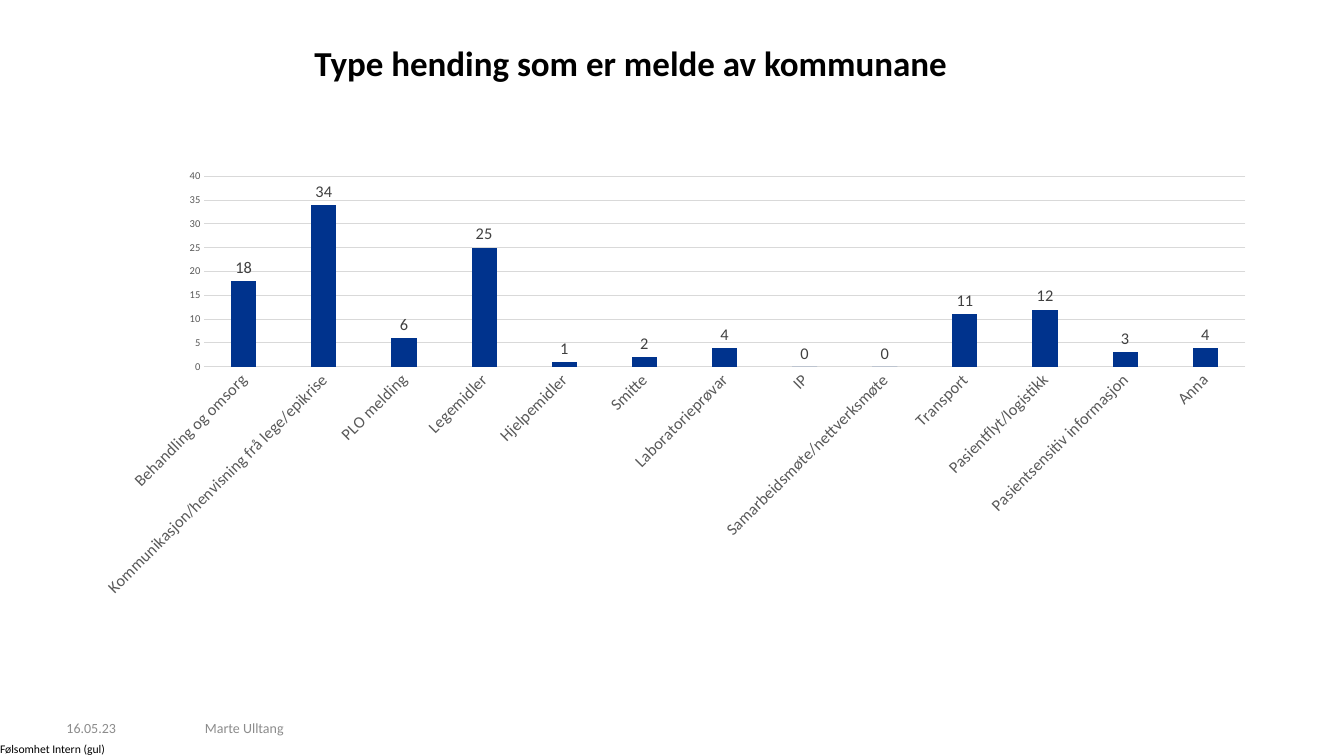
import pptx
import pptx.chart.data
import pptx.dml.color
import pptx.enum.chart
import pptx.enum.text
import pptx.util

Pt = pptx.util.Pt
FONT = "Calibri"
INCIDENTS = {
    "Behandling og omsorg": 18,
    "Kommunikasjon/henvisning frå lege/epikrise": 34,
    "PLO melding": 6,
    "Legemidler": 25,
    "Hjelpemidler": 1,
    "Smitte": 2,
    "Laboratorieprøvar": 4,
    "IP": 0,
    "Samarbeidsmøte/nettverksmøte": 0,
    "Transport": 11,
    "Pasientflyt/logistikk": 12,
    "Pasientsensitiv informasjon": 3,
    "Anna": 4,
}


def color(value):
    return pptx.dml.color.RGBColor.from_string(value)


def set_font(font, size, value, bold=False):
    font.name = FONT
    font.size = Pt(size)
    font.bold = bold
    font.color.rgb = color(value)


def set_line(line, value):
    line.color.rgb = color(value)
    line.width = Pt(0.75)


def add_text(page, text, left, top, width, height, size, value, bold=False):
    box = page.shapes.add_textbox(Pt(left), Pt(top), Pt(width), Pt(height))
    frame = box.text_frame
    frame.word_wrap = True
    frame.margin_left = frame.margin_right = 0
    frame.margin_top = frame.margin_bottom = 0
    para = frame.paragraphs[0]
    para.text = text
    set_font(para.font, size, value, bold)
    return frame


def add_title(page, text):
    para = add_text(page, text, 57, 39.6, 967.5, 41, 30, "000000", True).paragraphs[0]
    para.alignment = pptx.enum.text.PP_ALIGN.CENTER
    para.line_spacing = Pt(32)


def add_footer(page, text, left, width):
    frame = add_text(page, text, left, 615, width, 17.3, 12, "8C8C8C")
    frame.vertical_anchor = pptx.enum.text.MSO_ANCHOR.MIDDLE


def style_axes(chart):
    tick_none = pptx.enum.chart.XL_TICK_MARK.NONE
    for axis, size in ((chart.category_axis, 14), (chart.value_axis, 9)):
        axis.major_tick_mark = axis.minor_tick_mark = tick_none
        set_font(axis.tick_labels.font, size, "595959")
    category = chart.category_axis
    set_line(category.format.line, "D9D9D9")
    category._element.txPr.bodyPr.set("rot", "-2700000")
    values = chart.value_axis
    values.minimum_scale, values.maximum_scale, values.major_unit = 0, 40, 5
    values.format.line.fill.background()
    set_line(values.major_gridlines.format.line, "D9D9D9")


def add_incident_chart(page):
    data = pptx.chart.data.CategoryChartData()
    data.categories = list(INCIDENTS)
    data.add_series("Hendingar", list(INCIDENTS.values()))
    kind = pptx.enum.chart.XL_CHART_TYPE.COLUMN_CLUSTERED
    chart = page.shapes.add_chart(
        kind, Pt(67.7), Pt(138.2), Pt(1020.2), Pt(381.6), data).chart
    chart.has_title = False
    chart.has_legend = False
    set_font(chart.font, 10, "000000")
    style_axes(chart)
    plot = chart.plots[0]
    plot.vary_by_categories = False
    plot.gap_width = 219
    plot.overlap = -27
    series = plot.series[0]
    series.format.fill.solid()
    series.format.fill.fore_color.rgb = color("00338D")
    labels = series.data_labels
    labels.show_value = True
    labels.position = pptx.enum.chart.XL_LABEL_POSITION.OUTSIDE_END
    set_font(labels.font, 14, "404040")


def main():
    deck = pptx.Presentation()
    deck.slide_width = Pt(1152)
    deck.slide_height = Pt(648)
    page = deck.slides.add_slide(deck.slide_layouts[6])
    add_text(page, "Følsomhet Intern (gul)", 0, 635.8, 93, 12.2, 10, "000000")
    add_footer(page, "Marte Ulltang", 175.7, 703.5)
    add_title(page, "Type hending som er melde av kommunane")
    add_incident_chart(page)
    add_footer(page, "16.05.23", 57, 90.7)
    deck.save("out.pptx")


if __name__ == "__main__":
    main()
